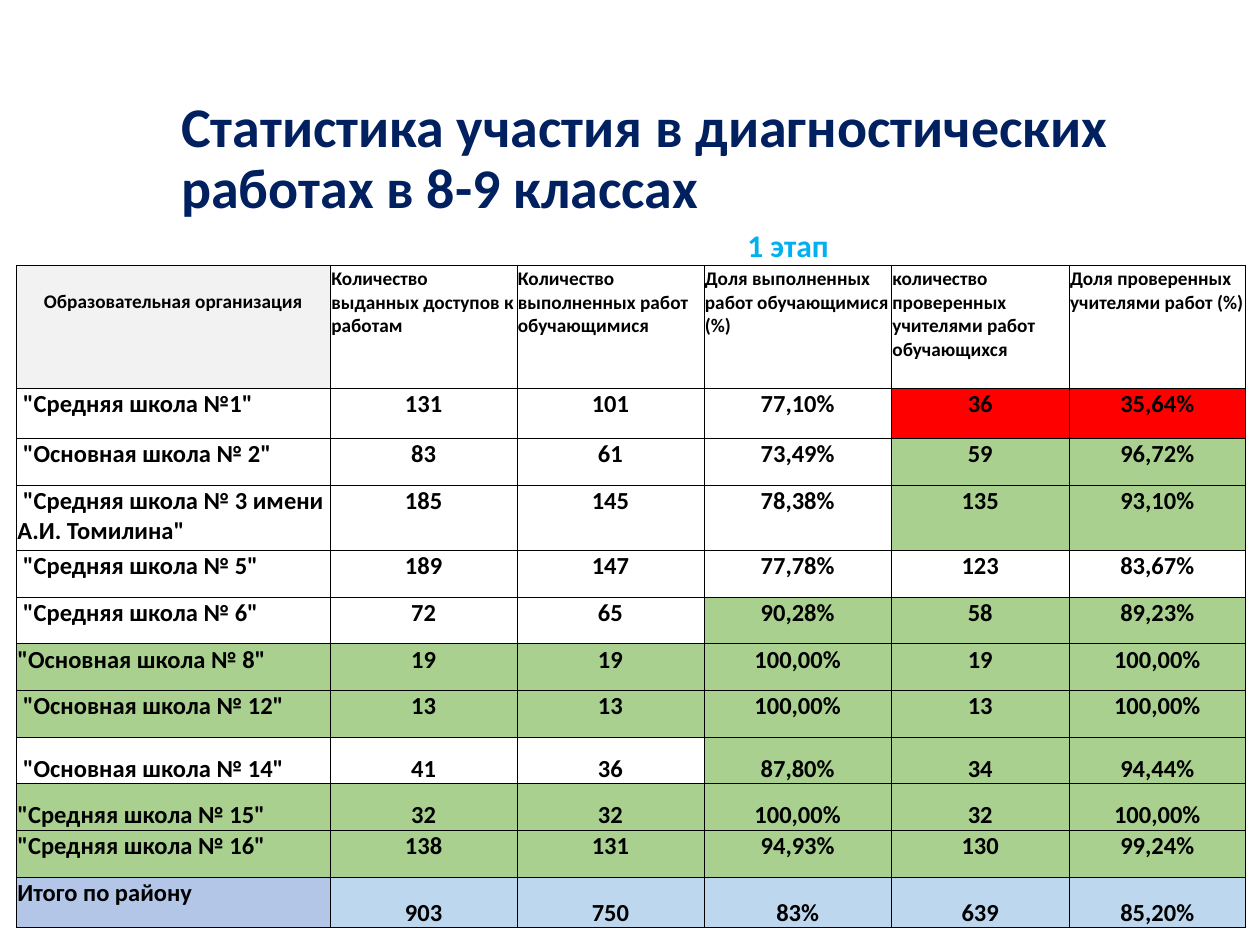
from dataclasses import dataclass

from lxml import etree
from pptx import Presentation
from pptx.dml.color import RGBColor
from pptx.enum.text import MSO_ANCHOR, MSO_AUTO_SIZE, PP_ALIGN
from pptx.oxml.ns import qn
from pptx.util import Cm, Pt

TOP, MIDDLE, BOTTOM = MSO_ANCHOR.TOP, MSO_ANCHOR.MIDDLE, MSO_ANCHOR.BOTTOM
LEFT, CENTER = PP_ALIGN.LEFT, PP_ALIGN.CENTER
TITLE_ONLY = 5
NO_STYLE_NO_GRID = "{2D5ABB26-0587-4C30-8999-92F81FD0307C}"


@dataclass(frozen=True)
class Theme:
    font: str = "Calibri"
    title: str = "002060"
    stage: str = "00B0F0"
    text: str = "000000"
    header: str = "F2F2F2"
    good: str = "A9D08E"
    bad: str = "FF0000"
    total_name: str = "B4C6E7"
    total: str = "BDD7EE"
    title_size: int = 32
    stage_size: int = 18
    header_size: int = 11
    body_size: int = 14
    border_width: float = 0.5


THEME = Theme()

COLUMN_WIDTHS = [6.33, 3.76, 3.77, 3.78, 3.58, 3.56]
ROW_HEIGHTS = [1.19, 2.46, 1.02, 0.94, 1.32] + [0.94] * 7 + [1.02]

HEADERS = [
    "Образовательная организация",
    "Количество выданных доступов к работам",
    "Количество выполненных работ обучающимися",
    "Доля выполненных работ обучающимися (%)",
    "количество проверенных учителями работ обучающихся",
    "Доля проверенных учителями работ (%)",
]

# Row values, fill colour, first filled column, vertical anchor
SCHOOLS = [
    ([' "Средняя школа №1"', "131", "101", "77,10%", "36", "35,64%"], THEME.bad, 4, TOP),
    ([' "Основная школа № 2"', "83", "61", "73,49%", "59", "96,72%"], THEME.good, 4, TOP),
    ([' "Средняя школа № 3 имени А.И. Томилина"', "185", "145", "78,38%", "135", "93,10%"],
     THEME.good, 4, TOP),
    ([' "Средняя школа № 5"', "189", "147", "77,78%", "123", "83,67%"], None, 0, TOP),
    ([' "Средняя школа № 6"', "72", "65", "90,28%", "58", "89,23%"], THEME.good, 3, TOP),
    (['"Основная школа № 8"', "19", "19", "100,00%", "19", "100,00%"], THEME.good, 0, TOP),
    ([' "Основная школа № 12"', "13", "13", "100,00%", "13", "100,00%"], THEME.good, 0, TOP),
    ([' "Основная школа № 14"', "41", "36", "87,80%", "34", "94,44%"], THEME.good, 3, BOTTOM),
    (['"Средняя школа № 15"', "32", "32", "100,00%", "32", "100,00%"], THEME.good, 0, BOTTOM),
    (['"Средняя школа № 16"', "138", "131", "94,93%", "130", "99,24%"], THEME.good, 0, TOP),
]
TOTALS = ["Итого по району", "903", "750", "83%", "639", "85,20%"]


class SlideBuilder:
    def __init__(self, prs, theme):
        self.theme = theme
        self.slide = prs.slides.add_slide(prs.slide_layouts[TITLE_ONLY])

    def format_text(self, tf, size, color, align):
        for p in tf.paragraphs:
            p.alignment = align
            for r in p.runs:
                r.font.name = self.theme.font
                r.font.size = Pt(size)
                r.font.bold = True
                r.font.color.rgb = RGBColor.from_string(color)

    def title(self, text, left, top, width, height):
        s = self.slide.shapes.title
        s.left, s.top, s.width, s.height = Cm(left), Cm(top), Cm(width), Cm(height)
        tf = s.text_frame
        tf.text = text
        tf.word_wrap = True
        tf.auto_size = MSO_AUTO_SIZE.NONE
        tf.vertical_anchor = MIDDLE
        tf.paragraphs[0].line_spacing = 0.9
        self.format_text(tf, self.theme.title_size, self.theme.title, LEFT)

    def table(self, left, top, widths, heights):
        frame = self.slide.shapes.add_table(
            len(heights), len(widths), Cm(left), Cm(top), Cm(sum(widths)), Cm(sum(heights)))
        table = frame.table
        table.first_row = table.horz_banding = False
        table._tbl.tblPr.find(qn("a:tableStyleId")).text = NO_STYLE_NO_GRID
        for column, width in zip(table.columns, widths):
            column.width = Cm(width)
        for row, height in zip(table.rows, heights):
            row.height = Cm(height)
        return table

    def borders(self, cell, sides):
        tc_pr = cell._tc.get_or_add_tcPr()
        for side in "LRTB":
            line = etree.SubElement(tc_pr, qn(f"a:ln{side}"), w=str(Pt(self.theme.border_width)))
            if side in sides:
                fill = etree.SubElement(line, qn("a:solidFill"))
                etree.SubElement(fill, qn("a:srgbClr"), val=self.theme.text)
            else:
                etree.SubElement(line, qn("a:noFill"))

    def cell(self, cell, text, size, color=THEME.text, align=CENTER, anchor=TOP,
             fill=None, sides="LRTB", margin_top=0.02):
        self.borders(cell, sides)
        if fill:
            cell.fill.solid()
            cell.fill.fore_color.rgb = RGBColor.from_string(fill)
        else:
            cell.fill.background()
        cell.margin_left = cell.margin_right = Cm(0.02)
        cell.margin_top, cell.margin_bottom = Cm(margin_top), 0
        cell.vertical_anchor = anchor
        cell.text_frame.text = text
        self.format_text(cell.text_frame, size, color, align)


def main():
    prs = Presentation()
    prs.slide_width, prs.slide_height = Cm(25.4), Cm(19.05)
    builder = SlideBuilder(prs, THEME)

    # Title
    builder.title("Статистика участия в диагностических работах в 8-9 классах",
                  3.4, 1.88, 20.24, 2.69)
    table = builder.table(0.33, 4.17, COLUMN_WIDTHS, ROW_HEIGHTS)

    # Stage row, merged over the value columns
    for column in range(len(HEADERS)):
        builder.cell(table.cell(0, column), "1 этап" if column == 1 else "",
                     THEME.stage_size, THEME.stage, anchor=BOTTOM, sides="B")
    table.cell(0, 1).merge(table.cell(0, len(HEADERS) - 1))

    # Header row: the first heading sits one line lower
    for column, text in enumerate(HEADERS):
        first = column == 0
        builder.cell(table.cell(1, column), text, THEME.header_size,
                     align=CENTER if first else LEFT,
                     fill=THEME.header if first else None,
                     margin_top=0.49 if first else 0.02)

    # School rows
    for row, (values, fill, first_filled, anchor) in enumerate(SCHOOLS, start=2):
        for column, text in enumerate(values):
            builder.cell(table.cell(row, column), text, THEME.body_size,
                         align=CENTER if column else LEFT, anchor=anchor,
                         fill=fill if column >= first_filled else None)

    # Totals row
    for column, text in enumerate(TOTALS):
        builder.cell(table.cell(len(ROW_HEIGHTS) - 1, column), text, THEME.body_size,
                     align=CENTER if column else LEFT,
                     anchor=BOTTOM if column else TOP,
                     fill=THEME.total if column else THEME.total_name)

    prs.save("out.pptx")


if __name__ == "__main__":
    main()
